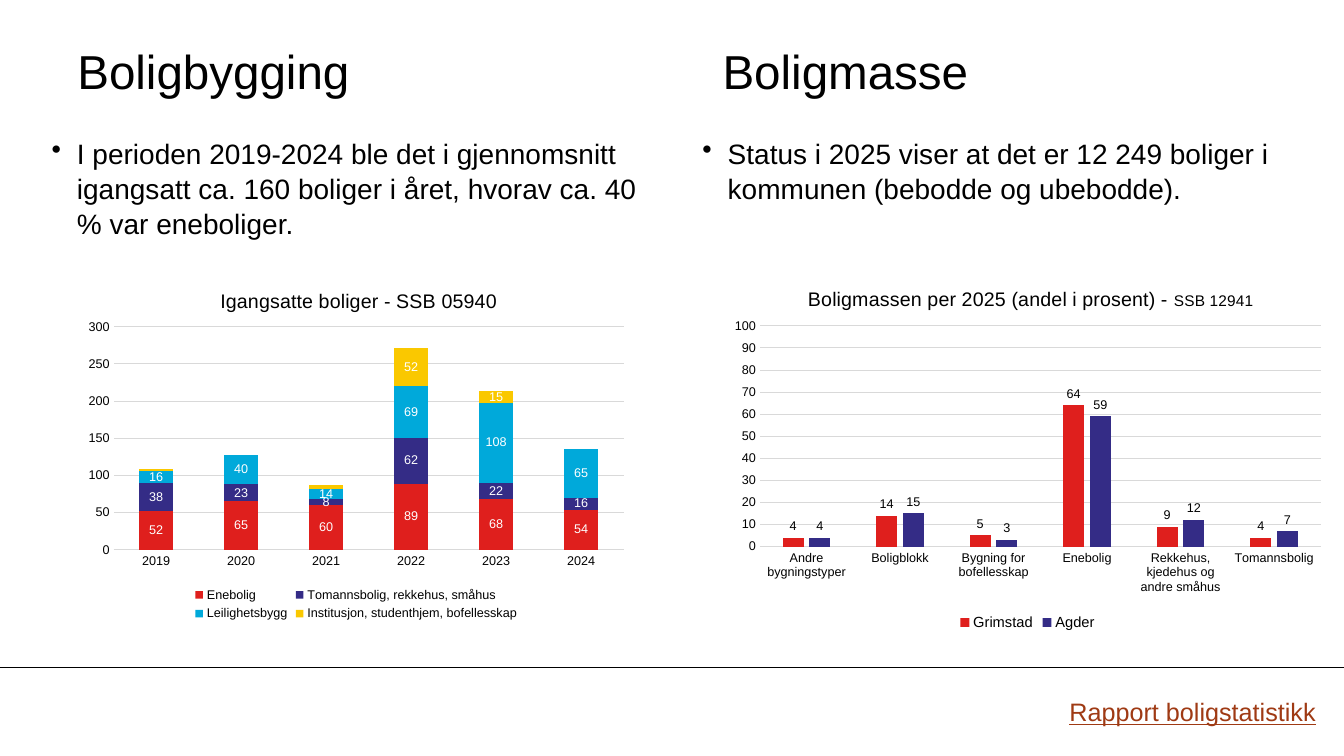
from lxml.etree import SubElement
from pptx import Presentation
from pptx.chart.data import CategoryChartData
from pptx.dml.color import RGBColor
from pptx.enum.chart import XL_CHART_TYPE as ChartType
from pptx.enum.chart import XL_LABEL_POSITION as LabelPosition
from pptx.enum.chart import XL_LEGEND_POSITION as LegendPosition
from pptx.enum.chart import XL_TICK_MARK as TickMark
from pptx.enum.shapes import MSO_CONNECTOR as Connector
from pptx.enum.text import MSO_ANCHOR as Anchor
from pptx.oxml.ns import qn
from pptx.oxml.xmlchemy import OxmlElement
from pptx.util import Cm, Pt

BLACK = RGBColor(0x00, 0x00, 0x00)
WHITE = RGBColor(0xFF, 0xFF, 0xFF)
GREY = RGBColor(0xD9, 0xD9, 0xD9)
RUST = RGBColor(0x9F, 0x3A, 0x14)
RED = RGBColor(0xDF, 0x1F, 0x1D)
INDIGO = RGBColor(0x34, 0x2C, 0x86)
CYAN = RGBColor(0x00, 0xA9, 0xDA)
YELLOW = RGBColor(0xFA, 0xC8, 0x00)
SERIES_COLORS = (RED, INDIGO, CYAN, YELLOW)
SLIDE_WIDTH, SLIDE_HEIGHT = 33.87, 19.05

BUILDING = {
    "heading": "Boligbygging",
    "statement": "I perioden 2019-2024 ble det i gjennomsnitt igangsatt ca. 160 "
                 "boliger i året, hvorav ca. 40 % var eneboliger.",
    "indent": 0.65,
    "chart_size": (14.05, 9.02),
    "type": ChartType.COLUMN_STACKED,
    "title": (("Igangsatte boliger - SSB 05940", 14),),
    "title_at": {"x": 0.25, "y": 0.05},
    "plot_at": {"x": 0.065, "y": 0.167, "w": 0.915, "h": 0.623},
    "scale": (300, 50),
    "gap": (150, 100),
    "legend_size": 9,
    "label_color": WHITE,
    "label_position": LabelPosition.CENTER,
    "labelled_points": {"Institusjon, studenthjem, bofellesskap": (3, 4)},
    "categories": ("2019", "2020", "2021", "2022", "2023", "2024"),
    "series": {
        "Enebolig": (52, 65, 60, 89, 68, 54),
        "Tomannsbolig, rekkehus, småhus": (38, 23, 8, 62, 22, 16),
        "Leilighetsbygg": (16, 40, 14, 69, 108, 65),
        "Institusjon, studenthjem, bofellesskap": (3, 0, 5, 52, 15, 0),
    },
}
STOCK = {
    "heading": "Boligmasse",
    "statement": "Status i 2025 viser at det er 12 249 boliger i kommunen "
                 "(bebodde og ubebodde).",
    "indent": 0.51,
    "chart_size": (15.37, 9.27),
    "type": ChartType.COLUMN_CLUSTERED,
    "title": (("Boligmassen per 2025 (andel i prosent) - ", 14), ("SSB 12941", 11)),
    "title_at": {"x": 0.135, "y": 0.045},
    "plot_at": {"x": 0.061, "y": 0.16, "w": 0.92, "h": 0.6},
    "scale": (100, 10),
    "gap": (219, -27),
    "legend_size": 10.5,
    "label_color": BLACK,
    "label_position": LabelPosition.OUTSIDE_END,
    "labelled_points": {},
    "categories": ("Andre bygningstyper", "Boligblokk", "Bygning for bofellesskap",
                   "Enebolig", "Rekkehus, kjedehus og andre småhus", "Tomannsbolig"),
    "series": {
        "Grimstad": (4, 14, 5, 64, 9, 4),
        "Agder": (4, 15, 3, 59, 12, 7),
    },
}


def set_font(font, size, color=BLACK, **extra):
    """Apply the deck's typeface with the given size and colour."""
    for name, value in {"name": "Arial", "size": Pt(size), "bold": False, **extra}.items():
        setattr(font, name, value)
    font.color.rgb = color


def add_text(page, box, text, size, color=BLACK, bullet=False, frame_format=None, **extra):
    """Place one paragraph of text in a box given in centimetres."""
    frame = page.shapes.add_textbox(*map(Cm, box)).text_frame
    for name, value in (frame_format or {}).items():
        setattr(frame, name, value)
    para = frame.paragraphs[0]
    if bullet:
        props = para._p.get_or_add_pPr()
        props.set("marL", str(Cm(0.64)))
        props.set("indent", str(-Cm(0.64)))
        SubElement(props, qn("a:buChar")).set("char", "•")
        para.line_spacing = 1.04
    span = para.add_run()
    span.text = text
    set_font(span.font, size, color, **extra)


def set_layout(parent, index, fractions, inner=False):
    """Fix a chart part at fractions of the chart's size."""
    layout = parent.find(qn("c:layout"))
    if layout is None:
        layout = OxmlElement("c:layout")
        parent.insert(index, layout)
    manual = SubElement(layout, qn("c:manualLayout"))
    if inner:
        SubElement(manual, qn("c:layoutTarget")).set("val", "inner")
    for side in "xy":
        SubElement(manual, qn(f"c:{side}Mode")).set("val", "edge")
    for side, fraction in fractions.items():
        SubElement(manual, qn(f"c:{side}")).set("val", str(fraction))


def style_axes(chart, scale):
    """Style both axes and the gridlines."""
    for axis in (chart.category_axis, chart.value_axis):
        axis.major_tick_mark = axis.minor_tick_mark = TickMark.NONE
        set_font(axis.tick_labels.font, 9)
    values = chart.value_axis
    values.minimum_scale = 0
    values.maximum_scale, values.major_unit = scale
    values.format.line.fill.background()
    for line in (chart.category_axis.format.line, values.major_gridlines.format.line):
        line.color.rgb = GREY
        line.width = Pt(0.75)


def style_series(plot, facts):
    """Colour each series and show its value labels."""
    for series, color in zip(plot.series, SERIES_COLORS):
        series.format.fill.solid()
        series.format.fill.fore_color.rgb = color
        series.invert_if_negative = False
        points = facts["labelled_points"].get(series.name)
        series.data_labels.show_value = points is None
        if points is None:
            series.data_labels.position = facts["label_position"]
            set_font(series.data_labels.font, 9, facts["label_color"])
        for point in points or ():
            set_font(series.points[point].data_label.font, 9, facts["label_color"])


def add_column_chart(page, box, facts):
    """Place a column chart with title and legend in a box."""
    data = CategoryChartData()
    data.categories = facts["categories"]
    for name, values in facts["series"].items():
        data.add_series(name, values)
    chart = page.shapes.add_chart(facts["type"], *map(Cm, box), data).chart
    set_font(chart.font, 10)
    plot = chart.plots[0]
    plot.vary_by_categories = False
    plot.gap_width, plot.overlap = facts["gap"]
    style_axes(chart, facts["scale"])
    style_series(plot, facts)
    chart.has_title = True
    para = chart.chart_title.text_frame.paragraphs[0]
    for text, size in facts["title"]:
        span = para.add_run()
        span.text = text
        set_font(span.font, size)
    set_layout(chart.chart_title._element, 1, facts["title_at"])
    set_layout(chart._chartSpace.chart.plotArea, 0, facts["plot_at"], inner=True)
    chart.has_legend = True
    chart.legend.position = LegendPosition.BOTTOM
    chart.legend.include_in_layout = False
    set_font(chart.legend.font, facts["legend_size"])


def add_half(page, box, facts):
    """Place a heading, a statement and a chart in one half of the slide."""
    left, top, width = box
    inner_left = left + facts["indent"]
    flush = {f"margin_{side}": 0 for side in ("left", "top", "right", "bottom")}
    flush["word_wrap"] = True
    add_text(page, (inner_left, top, 11.86, 1.9), facts["heading"], 34,
             frame_format={**flush, "vertical_anchor": Anchor.MIDDLE})
    add_text(page, (left, top + 2.57, width, 2.67), facts["statement"], 20,
             bullet=True, frame_format=flush)
    add_column_chart(page, (inner_left, top + 5.9, *facts["chart_size"]), facts)


def add_footer(page, box):
    """Draw the rule on top of the footer and the report name at its right."""
    left, top, width = box
    rule = page.shapes.add_connector(
        Connector.STRAIGHT, Cm(left), Cm(top), Cm(left + width), Cm(top))
    rule.line.color.rgb = BLACK
    rule.line.width = Pt(0.75)
    SubElement(rule._element.spPr, qn("a:effectLst"))
    add_text(page, (left + width - 7.17, top + 0.61, 6.73, 1.02), "Rapport boligstatistikk",
             18, RUST, frame_format={"word_wrap": False}, underline=True)


def main():
    """Build the housing slide and save it."""
    deck = Presentation()
    deck.slide_width, deck.slide_height = Cm(SLIDE_WIDTH), Cm(SLIDE_HEIGHT)
    page = deck.slides.add_slide(deck.slide_layouts[6])
    add_footer(page, (0, 16.81, SLIDE_WIDTH))
    add_half(page, (1.3, 0.83, 15.24), BUILDING)
    add_half(page, (17.7, 0.83, 14.88), STOCK)
    deck.save("out.pptx")


if __name__ == "__main__":
    main()
